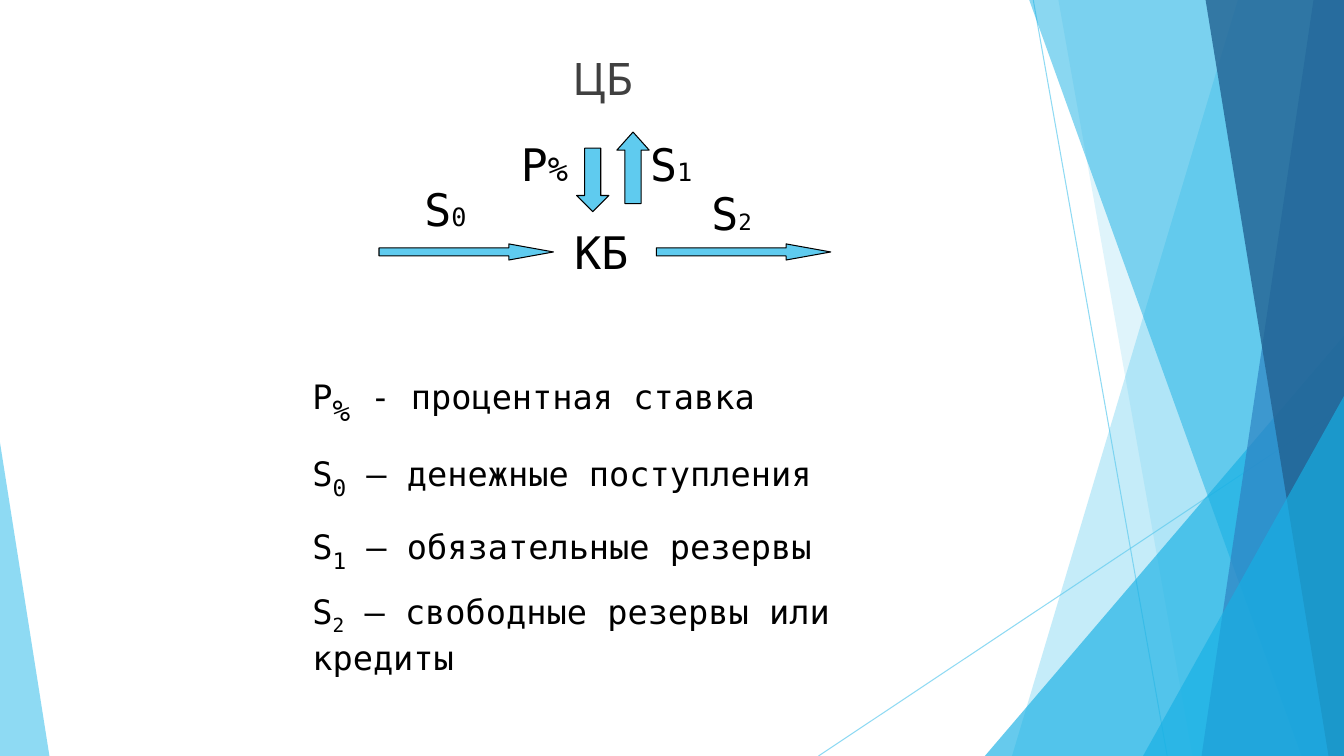
import pptx
import pptx.dml.color
import pptx.enum.shapes
import pptx.enum.text
import pptx.oxml
import pptx.oxml.ns
import pptx.util
from dataclasses import dataclass
from typing import Any

SHAPE = pptx.enum.shapes.MSO_SHAPE
AUTO_SIZE = pptx.enum.text.MSO_AUTO_SIZE
MONO = "DejaVu Sans Mono"
SKY, CYAN, BLUE, NAVY = "5FCBEF", "17B0E4", "2E83C3", "226292"
BLACK, GREY = "000000", "404040"
WIDTH, HEIGHT = pptx.util.Inches(13.33), pptx.util.Inches(7.5)


# Positions and sizes are percentages of the slide's width and height
@dataclass
class Box:
    left: float
    top: float
    width: float
    height: float

    def emu(self) -> tuple[int, int, int, int]:
        return px(self.left), py(self.top), px(self.width), py(self.height)


@dataclass
class Band:
    """Full-height area from a slanted left edge to the slide's right edge."""
    top_x: float
    bottom_x: float
    color: str
    opacity: int


@dataclass
class Triangle:
    box: Box
    apex: float
    color: str
    opacity: int


@dataclass
class Arrow:
    kind: Any
    box: Box
    head: float


@dataclass
class Run:
    text: str
    size: int
    baseline: int = 0


@dataclass
class TextBlock:
    box: Box
    paragraphs: list[list[Run]]
    wrap: bool = True
    spacing: int = 50


def px(share: float) -> int:
    return round(WIDTH * share / 100)


def py(share: float) -> int:
    return round(HEIGHT * share / 100)


def rgb(color: str) -> pptx.dml.color.RGBColor:
    return pptx.dml.color.RGBColor.from_string(color)


def paint(fill: Any, color: str, opacity: int = 100) -> None:
    fill.solid()
    fill.fore_color.rgb = rgb(color)
    if opacity < 100:
        clr = fill._xPr.find(".//" + pptx.oxml.ns.qn("a:srgbClr"))
        add_xml(clr, f'alpha val="{opacity * 1000}"')


def add_xml(parent: Any, tag: str, inner: str = "") -> None:
    name = tag.split()[0]
    ns = pptx.oxml.ns.nsdecls("a")
    parent.append(pptx.oxml.parse_xml(f"<a:{tag} {ns}>{inner}</a:{name}>"))


def style_run(r: Any, font: str, size: int, color: str) -> None:
    r.font.name = font
    r.font.size = pptx.util.Pt(size)
    r.font.color.rgb = rgb(color)


def draw_line(s: Any, x1: float, y1: float, x2: float, y2: float) -> None:
    line = s.shapes.add_connector(pptx.enum.shapes.MSO_CONNECTOR.STRAIGHT,
                                  px(x1), py(y1), px(x2), py(y2))
    line.line.width = pptx.util.Pt(0.75)
    paint(line.line.fill, SKY, 70)
    add_xml(line._element.spPr, "effectLst")


def draw_facet(s: Any, facet: Band | Triangle) -> None:
    if isinstance(facet, Band):
        builder = s.shapes.build_freeform(px(facet.top_x), 0)
        builder.add_line_segments([(WIDTH, 0), (WIDTH, HEIGHT), (px(facet.bottom_x), HEIGHT)])
        sp = builder.convert_to_shape()
    else:
        sp = s.shapes.add_shape(SHAPE.ISOSCELES_TRIANGLE, *facet.box.emu())
        sp.adjustments[0] = facet.apex
    sp.shadow.inherit = False
    sp.line.fill.background()
    paint(sp.fill, facet.color, facet.opacity)


def draw_arrow(s: Any, arrow: Arrow) -> None:
    sp = s.shapes.add_shape(arrow.kind, *arrow.box.emu())
    sp.adjustments[0] = 0.5
    sp.adjustments[1] = arrow.head
    sp.shadow.inherit = False
    paint(sp.fill, SKY)
    paint(sp.line.fill, BLACK)
    sp.line.width = pptx.util.Pt(0.75)


def draw_text(s: Any, block: TextBlock) -> None:
    tf = s.shapes.add_textbox(*block.box.emu()).text_frame
    tf.word_wrap = block.wrap
    tf.auto_size = AUTO_SIZE.SHAPE_TO_FIT_TEXT
    for i, runs in enumerate(block.paragraphs):
        p = tf.add_paragraph() if i else tf.paragraphs[0]
        if block.spacing:
            add_xml(p._p.get_or_add_pPr(), "spcBef",
                    f'<a:spcPct val="{block.spacing * 1000}"/>')
        for run in runs:
            r = p.add_run()
            r.text = run.text
            style_run(r, MONO, run.size, BLACK)
            if run.baseline:
                r.font._element.set("baseline", str(run.baseline * 1000))


def draw_heading(s: Any, text: str, box: Box) -> None:
    sp = s.placeholders[1]
    sp.left, sp.top, sp.width, sp.height = box.emu()
    tf = sp.text_frame
    tf.text = text
    tf.auto_size = AUTO_SIZE.NONE
    p = tf.paragraphs[0]
    p.alignment = pptx.enum.text.PP_ALIGN.CENTER
    p.space_before = pptx.util.Pt(10)
    pPr = p._p.get_or_add_pPr()
    pPr.set("marL", "0")
    pPr.set("indent", "0")
    add_xml(pPr, "buNone")
    style_run(p.runs[0], "Cabin", 32, GREY)


def label(left: float, top: float, width: float, symbol: str, index: str, size: int) -> TextBlock:
    return TextBlock(Box(left, top, width, 8.4), [[Run(symbol, 32), Run(index, size)]])


def term(symbol: str, index: str, size: int, meaning: str) -> list[Run]:
    return [Run(symbol, 24), Run(index, size, -25), Run(meaning, 24)]


LINES = [(76.88, 0, 86.85, 100), (100, 53.73, 60.9, 100)]
FACETS = [
    Band(92.1, 75.3, SKY, 36),
    Band(78.75, 88.73, SKY, 20),
    Triangle(Box(73.28, 44.4, 26.72, 55.6), 1, CYAN, 66),
    Band(76.58, 96.83, CYAN, 50),
    Band(97.73, 89.4, BLUE, 70),
    Band(89.7, 98.85, NAVY, 80),
    Triangle(Box(85.05, 52.4, 14.95, 47.6), 1, CYAN, 66),
    Triangle(Box(0, 58.53, 3.68, 41.47), 0, SKY, 70),
]
ARROWS = [
    Arrow(SHAPE.DOWN_ARROW, Box(42.9, 19.6, 2.4, 8.4), 0.5),
    Arrow(SHAPE.UP_ARROW, Box(45.9, 17.47, 2.4, 9.47), 0.56),
    *(Arrow(SHAPE.RIGHT_ARROW, Box(x, 32.27, 12.98, 2.13), 2.77) for x in (28.2, 48.83)),
]
TEXTS = [
    TextBlock(Box(42, 29.07, 5.63, 8.4), [[Run("КБ", 32)]], wrap=False, spacing=0),
    label(52.2, 23.87, 4.73, "S", "2", 16),
    label(30.83, 23.33, 6.23, "S", "0", 18),
    label(38.03, 17.47, 7.65, "P", "%", 24),
    label(47.63, 17.47, 8.85, "S", "1", 18),
    TextBlock(Box(22.5, 46.8, 49.65, 30.93), [
        term("P", "%", 36, " - процентная ставка"),
        term("S", "0", 28, " – денежные поступления"),
        term("S", "1", 28, " – обязательные резервы"),
        term("S", "2", 24, " – свободные резервы или кредиты"),
    ]),
]


def main() -> None:
    prs = pptx.Presentation()
    prs.slide_width, prs.slide_height = WIDTH, HEIGHT
    s = prs.slides.add_slide(prs.slide_layouts[1])
    title = s.shapes.title._element
    title.getparent().remove(title)
    # Background decoration
    for line in LINES:
        draw_line(s, *line)
    for facet in FACETS:
        draw_facet(s, facet)
    # Money flow diagram and legend
    draw_heading(s, "ЦБ", Box(39.83, 6, 10.05, 10.53))
    for arrow in ARROWS:
        draw_arrow(s, arrow)
    for block in TEXTS:
        draw_text(s, block)
    prs.save("out.pptx")


if __name__ == "__main__":
    main()
